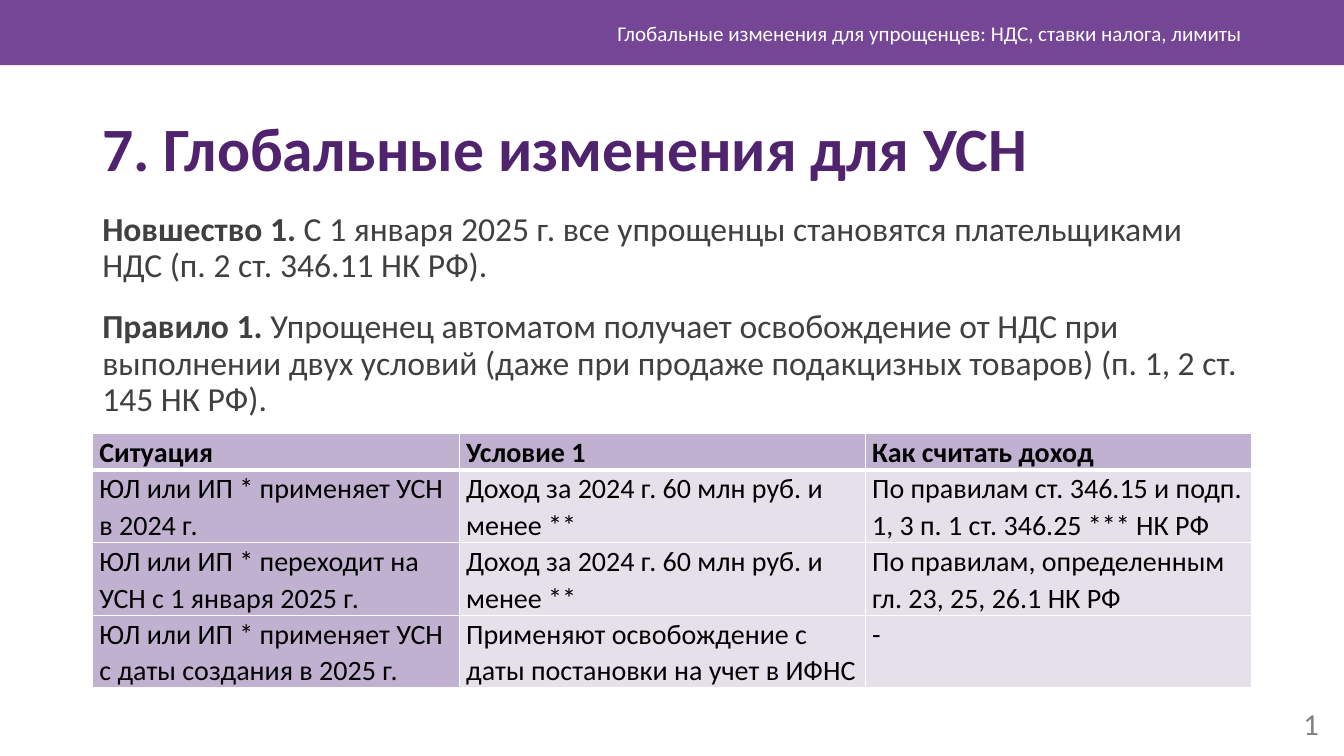
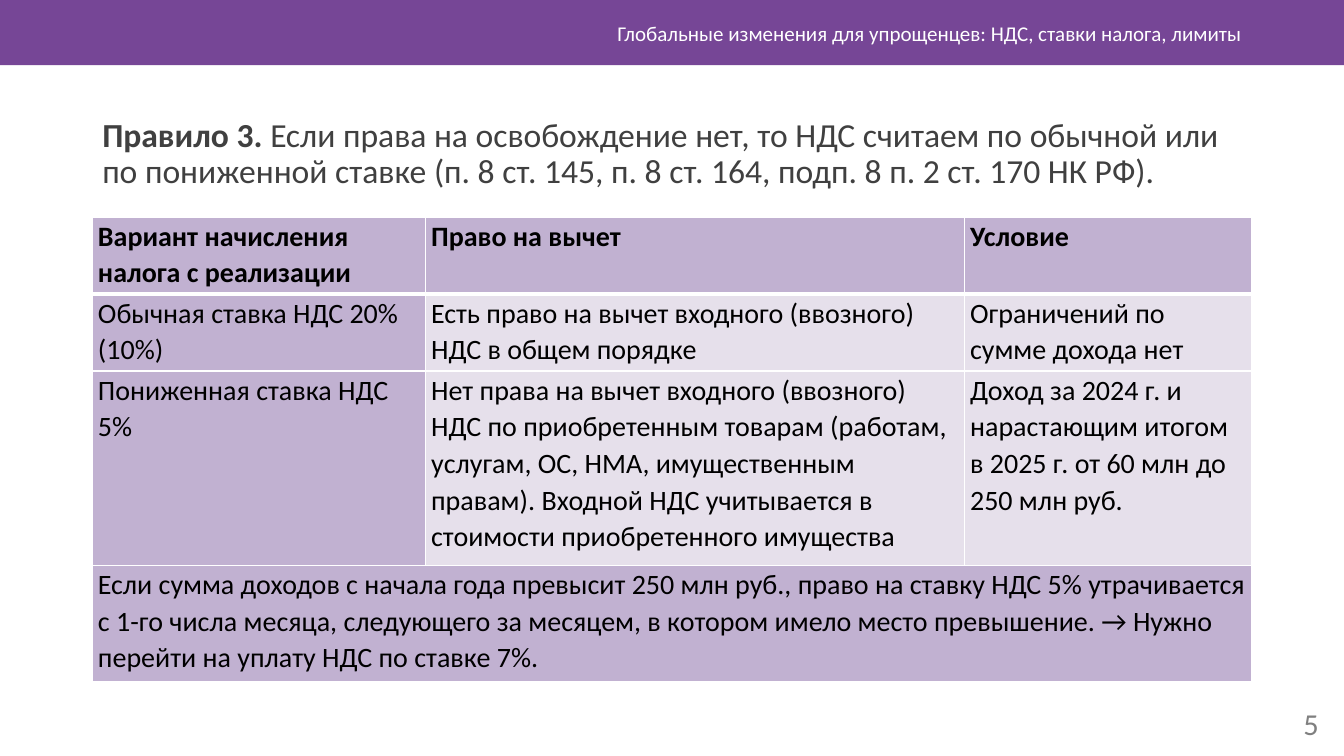
import pptx
import pptx.util
import pptx.dml.color
import pptx.enum.shapes
import pptx.enum.text
import pptx.oxml
import pptx.oxml.ns

Pt = pptx.util.Pt
ALIGN = pptx.enum.text.PP_ALIGN
ANCHOR = pptx.enum.text.MSO_ANCHOR

FONT = "Calibri"
COLORS = {
    "band": "764696", "title": "50236E", "body": "404040", "number": "808080",
    "white": "FFFFFF", "black": "000000", "strong": "C1B1D1", "pale": "E6E0EB",
}
HEADER = "Глобальные изменения для упрощенцев: НДС, ставки налога, лимиты"
LEFT, WIDTH = 66, 828

SLIDES = [
    {
        "number": "1",
        "title": "7. Глобальные изменения для УСН",
        "body_top": 148, "body_height": 160,
        "body": [
            ("Новшество 1. ", "С 1 января 2025 г. все упрощенцы становятся плательщиками "
             "НДС (п. 2 ст. 346.11 НК РФ)."),
            ("Правило 1. ", "Упрощенец автоматом получает освобождение от НДС при "
             "выполнении двух условий (даже при продаже подакцизных товаров) "
             "(п. 1, 2 ст. 145 НК РФ)."),
        ],
        "table_top": 309.5, "margin": 5,
        "cols": [262, 290, 276], "rows": [26, 52, 52, 52],
        "cells": [
            ["Ситуация", "Условие 1", "Как считать доход"],
            ["ЮЛ или ИП * применяет УСН в 2024 г.",
             "Доход за 2024 г. 60 млн руб. и менее **",
             "По правилам ст. 346.15 и подп. 1, 3 п. 1 ст. 346.25 *** НК РФ"],
            ["ЮЛ или ИП * переходит на УСН с 1 января 2025 г.",
             "Доход за 2024 г. 60 млн руб. и менее **",
             "По правилам, определенным гл. 23, 25, 26.1 НК РФ"],
            ["ЮЛ или ИП * применяет УСН с даты создания в 2025 г.",
             "Применяют освобождение с даты постановки на учет в ИФНС",
             "-"],
        ],
    },
    {
        "number": "5",
        "title": None,
        "body_top": 81, "body_height": 66,
        "body": [
            ("Правило 3. ", "Если права на освобождение нет, то НДС считаем по обычной или "
             "по пониженной ставке (п. 8 ст. 145, п. 8 ст. 164, подп. 8 п. 2 ст. 170 НК РФ)."),
        ],
        "table_top": 155, "margin": 4,
        "cols": [238, 385, 205], "rows": [55, 55, 139, 83],
        "cells": [
            ["Вариант начисления налога с реализации", "Право на вычет", "Условие"],
            ["Обычная ставка НДС 20% (10%)",
             "Есть право на вычет входного (ввозного) НДС в общем порядке",
             "Ограничений по сумме дохода нет"],
            ["Пониженная ставка НДС 5%",
             "Нет права на вычет входного (ввозного) НДС по приобретенным товарам "
             "(работам, услугам, ОС, НМА, имущественным правам). Входной НДС "
             "учитывается в стоимости приобретенного имущества",
             "Доход за 2024 г. и нарастающим итогом в 2025 г. от 60 млн до 250 млн руб."],
            ["Если сумма доходов с начала года превысит 250 млн руб., право на ставку "
             "НДС 5% утрачивается с 1-го числа месяца, следующего за месяцем, в котором "
             "имело место превышение. → Нужно перейти на уплату НДС по ставке 7%."],
        ],
    },
]


def add_run(p, text, size, color, bold=False):
    r = p.add_run()
    r.text = text
    r.font.name = FONT
    r.font.size = Pt(size)
    r.font.bold = bold
    r.font.color.rgb = pptx.dml.color.RGBColor.from_string(COLORS[color])


def paint(fill, color):
    fill.solid()
    fill.fore_color.rgb = pptx.dml.color.RGBColor.from_string(COLORS[color])


prs = pptx.Presentation()
prs.slide_width, prs.slide_height = Pt(960), Pt(540)

for content in SLIDES:
    s = prs.slides.add_slide(prs.slide_layouts[5 if content["title"] else 6])

    # Top band
    band = s.shapes.add_shape(pptx.enum.shapes.MSO_SHAPE.RECTANGLE, 0, 0, prs.slide_width, Pt(46.5))
    band.shadow.inherit = False
    paint(band.fill, "band")
    band.line.fill.background()

    # Running header and slide number
    for text, x, y, w, size, color in [
        (HEADER, 255, 9, 639, 15, "white"),
        (content["number"], 901, 502, 48, 21.7, "number"),
    ]:
        sp = s.shapes.add_textbox(Pt(x), Pt(y), Pt(w), Pt(29))
        tf = sp.text_frame
        tf.word_wrap = True
        tf.vertical_anchor = ANCHOR.MIDDLE
        p = tf.paragraphs[0]
        p.alignment = ALIGN.RIGHT
        add_run(p, text, size, color)

    # Title
    if content["title"]:
        sp = s.shapes.title
        sp.left, sp.top, sp.width, sp.height = Pt(LEFT), Pt(81), Pt(WIDTH), Pt(60)
        tf = sp.text_frame
        tf.auto_size = pptx.enum.text.MSO_AUTO_SIZE.NONE
        tf.vertical_anchor = ANCHOR.TOP
        p = tf.paragraphs[0]
        p.alignment = ALIGN.LEFT
        p.line_spacing = 0.9
        add_run(p, content["title"], 44, "title", True)

    # Rules above the table
    sp = s.shapes.add_textbox(Pt(LEFT), Pt(content["body_top"]), Pt(WIDTH), Pt(content["body_height"]))
    tf = sp.text_frame
    tf.word_wrap = True
    for i, (lead, text) in enumerate(content["body"]):
        p = tf.add_paragraph() if i else tf.paragraphs[0]
        p.line_spacing = 0.9
        p.space_before = Pt(10 if i else 0)
        p.space_after = Pt(8)
        add_run(p, lead, 24, "body", True)
        add_run(p, text, 24, "body")

    # Table
    rows, cols = content["rows"], content["cols"]
    table = s.shapes.add_table(len(rows), len(cols), Pt(LEFT), Pt(content["table_top"]),
                               Pt(WIDTH), Pt(sum(rows))).table
    table.horz_banding = False
    for column, width in zip(table.columns, cols):
        column.width = Pt(width)
    for i, (height, texts) in enumerate(zip(rows, content["cells"])):
        table.rows[i].height = Pt(height)
        if len(texts) == 1:
            table.cell(i, 0).merge(table.cell(i, len(cols) - 1))
        for j in range(len(cols)):
            cell = table.cell(i, j)
            # White borders, thicker under the heading row
            tc_pr = cell._tc.get_or_add_tcPr()
            for side, weight in [("L", 1), ("R", 1), ("T", 3 if i == 1 else 1), ("B", 3 if i == 0 else 1)]:
                tc_pr.append(pptx.oxml.parse_xml(
                    f'<a:ln{side} {pptx.oxml.ns.nsdecls("a")} w="{Pt(weight)}"><a:solidFill>'
                    f'<a:srgbClr val="{COLORS["white"]}"/></a:solidFill></a:ln{side}>'))
            paint(cell.fill, "strong" if i == 0 or j == 0 else "pale")
            cell.margin_left = cell.margin_right = Pt(content["margin"])
            cell.margin_top = cell.margin_bottom = 0
            if j < len(texts):
                p = cell.text_frame.paragraphs[0]
                p.line_spacing = 1.07
                add_run(p, texts[j], 20, "black", i == 0)

prs.save("out.pptx")
